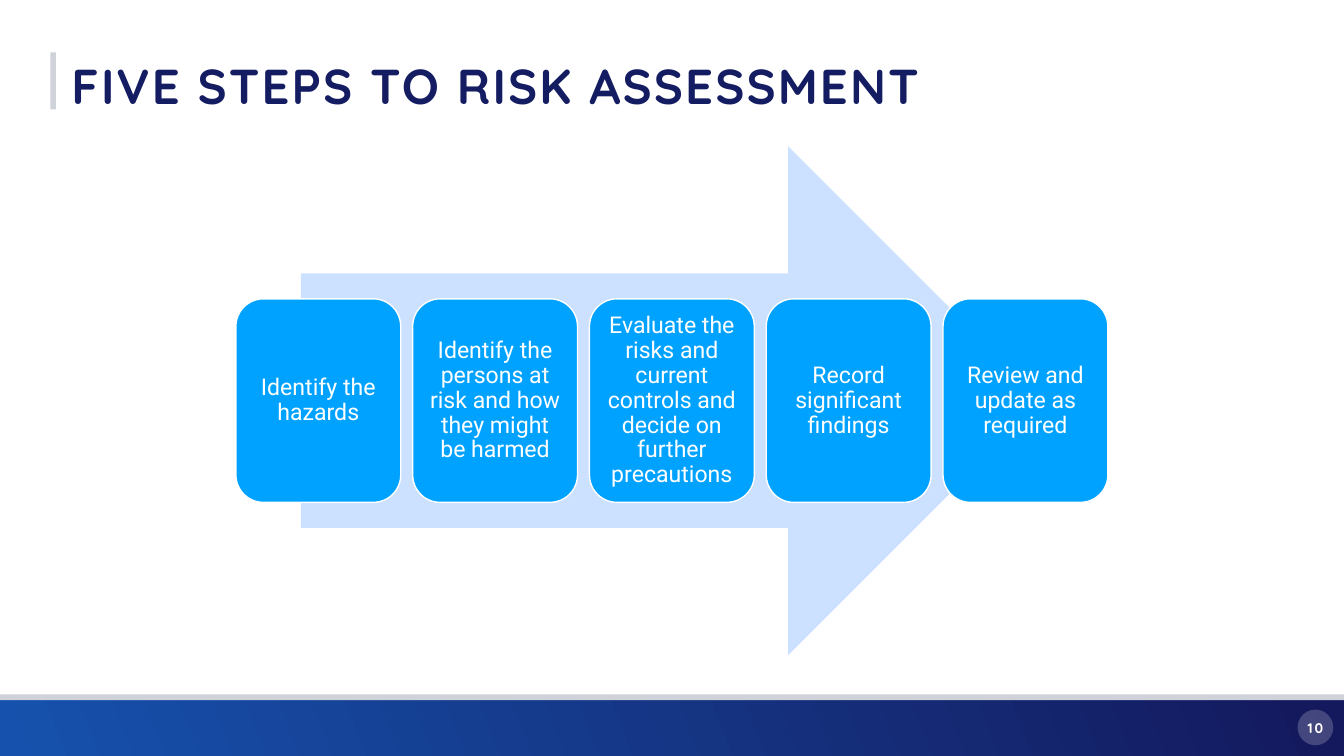
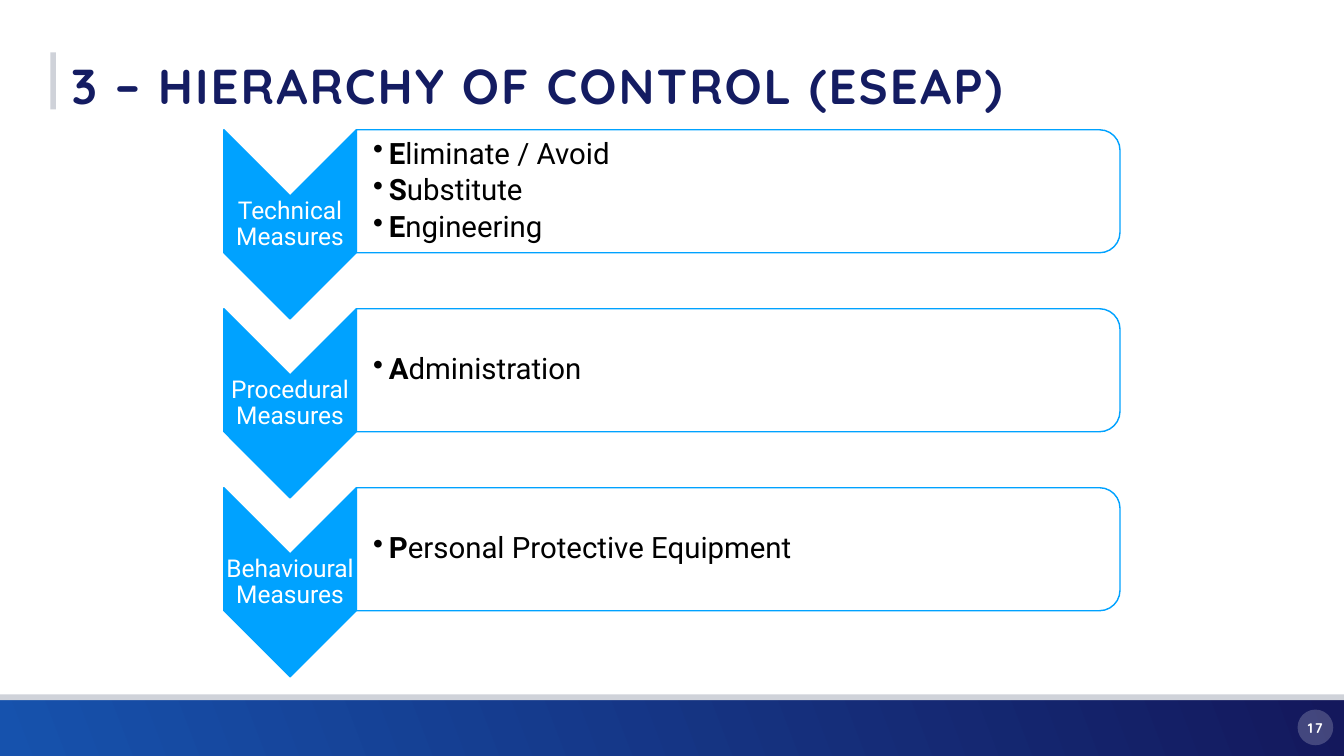
import dataclasses
import typing

import lxml.etree
import pptx
import pptx.dml.color
import pptx.enum.shapes
import pptx.enum.text
import pptx.oxml.ns
import pptx.util

Cm = pptx.util.Cm
Pt = pptx.util.Pt
MSO = pptx.enum.shapes.MSO_SHAPE
ALIGN = pptx.enum.text.PP_ALIGN
ANCHOR = pptx.enum.text.MSO_ANCHOR
qn = pptx.oxml.ns.qn

SLIDE_W, SLIDE_H = 67.74, 38.1
WHITE, BLACK = "FFFFFF", "000000"
NAVY, GREY = "141C62", "CFD2D9"
SKY, PALE = "00A2FF", "CCE0FF"
BAND_FROM, BAND_TO = "1652AD", "14185C"
HEADING, BODY = "Quicksand", "Roboto"


@dataclasses.dataclass(frozen=True)
class Box:
    left: float
    top: float
    width: float
    height: float

    def turned(self) -> "Box":
        shift = (self.width - self.height) / 2
        return Box(self.left + shift, self.top - shift, self.height, self.width)

    def lengths(self) -> list[int]:
        return [Cm(v) for v in (self.left, self.top, self.width, self.height)]


@dataclasses.dataclass(frozen=True)
class Style:
    font: str
    size: float
    color: str
    bold: bool = False
    tracking: float = 0


@dataclasses.dataclass(frozen=True)
class Measure:
    label: str
    controls: tuple[str, ...]


TITLE = Style(HEADING, 70, NAVY, True, 3)
NUMBER = Style(HEADING, 20, WHITE, True, 2.7)
STEP = Style(BODY, 33, WHITE)
LABEL = Style(BODY, 35, WHITE)
CONTROL = Style(BODY, 42, BLACK)
INITIAL = dataclasses.replace(CONTROL, bold=True)

STEPS = (
    "Identify the hazards",
    "Identify the persons at risk and how they might be harmed",
    "Evaluate the risks and current controls and decide on further precautions",
    "Record significant findings",
    "Review and update as required",
)
MEASURES = (
    Measure("Technical Measures", ("Eliminate / Avoid", "Substitute", "Engineering")),
    Measure("Procedural Measures", ("Administration",)),
    Measure("Behavioural Measures", ("Personal Protective Equipment",)),
)


def rgb(color: str) -> pptx.dml.color.RGBColor:
    return pptx.dml.color.RGBColor.from_string(color)


def add_run(p: typing.Any, text: str, style: Style) -> None:
    r = p.add_run()
    r.text = text
    r.font.name = style.font
    r.font.size = Pt(style.size)
    r.font.bold = style.bold
    r.font.color.rgb = rgb(style.color)
    if style.tracking:
        r._r.get_or_add_rPr().set("spc", str(round(style.tracking * 100)))


def set_frame(tf: typing.Any, anchor: typing.Any, inset: float,
              left: float | None = None) -> None:
    tf.word_wrap = True
    tf.auto_size = pptx.enum.text.MSO_AUTO_SIZE.NONE
    tf.vertical_anchor = anchor
    tf.margin_left = Cm(inset if left is None else left)
    tf.margin_top = tf.margin_right = tf.margin_bottom = Cm(inset)


def add_shape(slide: typing.Any, kind: typing.Any, box: Box, fill: str,
              line: str | None = None, opacity: int = 100,
              quarter_turn: bool = False) -> typing.Any:
    placed = box.turned() if quarter_turn else box
    sp = slide.shapes.add_shape(kind, *placed.lengths())
    sp.rotation = 90 if quarter_turn else 0
    sp.shadow.inherit = False
    sp.fill.solid()
    sp.fill.fore_color.rgb = rgb(fill)
    if opacity < 100:
        color = sp.element.spPr.find(".//" + qn("a:srgbClr"))
        lxml.etree.SubElement(color, qn("a:alpha")).set("val", str(opacity * 1000))
    if line:
        sp.line.color.rgb = rgb(line)
        sp.line.width = Pt(2)
    else:
        sp.line.fill.background()
    return sp


def add_text_box(slide: typing.Any, box: Box) -> typing.Any:
    return slide.shapes.add_textbox(*box.lengths()).text_frame


def write_centred(tf: typing.Any, text: str, style: Style, spacing: float) -> None:
    p = tf.paragraphs[0]
    p.alignment = ALIGN.CENTER
    p.line_spacing = spacing
    add_run(p, text, style)


def write_controls(tf: typing.Any, controls: tuple[str, ...]) -> None:
    for i, control in enumerate(controls):
        p = tf.add_paragraph() if i else tf.paragraphs[0]
        p.line_spacing = 0.9
        p.space_after = Pt(7)
        pPr = p._p.get_or_add_pPr()
        pPr.set("marL", str(Cm(0.79)))
        pPr.set("indent", str(-Cm(0.79)))
        lxml.etree.SubElement(pPr, qn("a:buChar")).set("char", "•")
        add_run(p, control[0], INITIAL)
        add_run(p, control[1:], CONTROL)


def furnish_layout(slide: typing.Any) -> None:
    footer = add_shape(slide, MSO.RECTANGLE, Box(0, 35.23, SLIDE_W, 2.87), BAND_FROM)
    footer.fill.gradient()
    footer.fill.gradient_angle = 21
    for stop, color in zip(footer.fill.gradient_stops, (BAND_FROM, BAND_TO)):
        stop.color.rgb = rgb(color)
    disc = add_shape(slide, MSO.OVAL, Box(65.4, 35.76, 1.8, 1.8), WHITE, opacity=20)
    title_mark = add_shape(slide, MSO.RECTANGLE, Box(2.54, 2.64, 0.28, 2.87), GREY)
    footer_edge = add_shape(slide, MSO.RECTANGLE, Box(0, 35, SLIDE_W, 0.28), GREY)
    for i, sp in enumerate((footer, disc, title_mark, footer_edge)):
        sp.element.nvSpPr.cNvPr.set("id", str(101 + i))
        slide.slide_layout.shapes.element.append(sp.element)


def add_slide(prs: typing.Any, title: str, number: int) -> typing.Any:
    slide = prs.slides.add_slide(prs.slide_layouts[5])
    sp = slide.shapes.title
    sp.left, sp.top, sp.width, sp.height = Box(3.45, 2.67, 62.87, 3.28).lengths()
    set_frame(sp.text_frame, ANCHOR.TOP, 0.15)
    p = sp.text_frame.paragraphs[0]
    p.alignment = ALIGN.LEFT
    add_run(p, title, TITLE)
    tf = add_text_box(slide, Box(65.4, 36.27, 1.8, 0.99))
    set_frame(tf, ANCHOR.TOP, 0.15)
    write_centred(tf, str(number), NUMBER, 0.8)
    return slide


def draw_steps(slide: typing.Any) -> None:
    add_shape(slide, MSO.RIGHT_ARROW, Box(15.16, 7.37, 37.39, 25.65), PALE)
    for i, step in enumerate(STEPS):
        box = Box(11.89 + 8.91 * i, 15.06, 8.31, 10.26)
        sp = add_shape(slide, MSO.ROUNDED_RECTANGLE, box, SKY, WHITE)
        set_frame(sp.text_frame, ANCHOR.MIDDLE, 0.36)
        write_centred(sp.text_frame, step, STEP, 0.9)


def draw_measures(slide: typing.Any) -> None:
    for i, measure in enumerate(MEASURES):
        top = 6.54 + 9.02 * i
        add_shape(slide, MSO.CHEVRON, Box(11.28, top, 6.68, 9.53), SKY, SKY,
                  quarter_turn=True)
        tf = add_text_box(slide, Box(11.28, top + 3.34, 6.68, 2.87))
        set_frame(tf, ANCHOR.MIDDLE, 0.05)
        write_centred(tf, measure.label, LABEL, 0.9)
        add_shape(slide, MSO.ROUND_2_SAME_RECTANGLE, Box(17.97, top, 38.48, 6.2),
                  WHITE, SKY, opacity=90, quarter_turn=True)
        tf = add_text_box(slide, Box(17.97, top + 0.31, 38.18, 5.59))
        set_frame(tf, ANCHOR.MIDDLE, 0.08, left=0.84)
        write_controls(tf, measure.controls)


def main() -> None:
    prs = pptx.Presentation()
    prs.slide_width, prs.slide_height = Cm(SLIDE_W), Cm(SLIDE_H)
    steps = add_slide(prs, "FIVE STEPS TO RISK ASSESSMENT", 10)
    furnish_layout(steps)
    draw_steps(steps)
    draw_measures(add_slide(prs, "3 – HIERARCHY OF CONTROL (ESEAP)", 17))
    prs.save("out.pptx")


if __name__ == "__main__":
    main()
